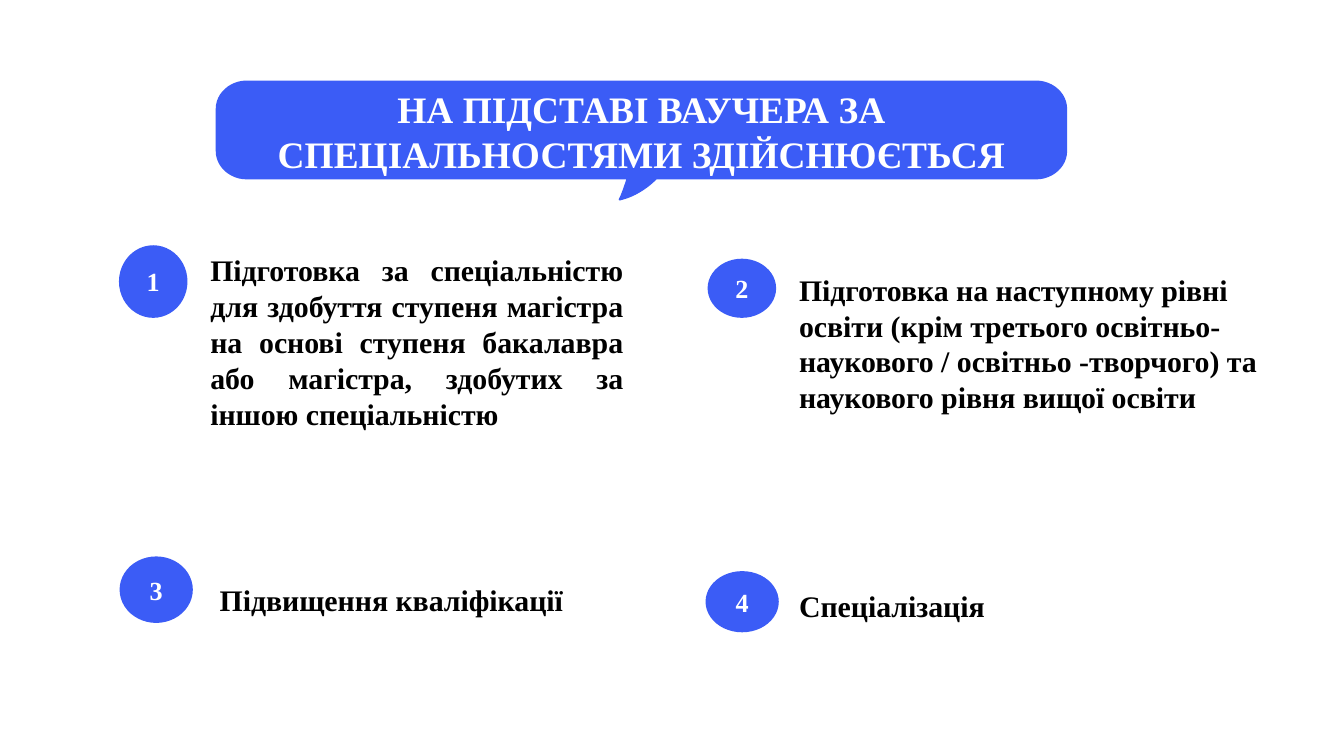
from pptx import Presentation
from pptx.dml.color import RGBColor
from pptx.enum.shapes import MSO_SHAPE as Shape
from pptx.enum.text import MSO_ANCHOR as Anchor, PP_ALIGN as Align
from pptx.util import Pt

PX = 4572  # EMU per px, 200 px to the inch
FONT = "Times New Roman"
COLORS = {"accent": "3B5CF6", "text": "000000", "light": "FFFFFF"}
CURVE_STEPS = 12

TITLE = "НА ПІДСТАВІ ВАУЧЕРА ЗА СПЕЦІАЛЬНОСТЯМИ ЗДІЙСНЮЄТЬСЯ"

# Speech bubble outline: a point is a line, three points are a Bézier curve
BUBBLE_START = (367, 120)
BUBBLE_SEGMENTS = [
    [(342, 120), (321, 139), (321, 162)],
    [(321, 225)],
    [(321, 248), (342, 267), (367, 267)],
    [(932, 267)],
    [(932, 267), (925, 289), (921, 296)],
    [(920, 298), (922, 299), (924, 298)],
    [(948, 292), (966, 278), (977, 267)],
    [(1542, 267)],
    [(1567, 267), (1588, 248), (1588, 225)],
    [(1588, 162)],
    [(1588, 139), (1567, 120), (1542, 120)],
    [BUBBLE_START],
]

# Text, text box, alignment, badge box (left, top, width, height)
ITEMS = [
    ("Підготовка за спеціальністю для здобуття ступеня магістра на основі "
     "ступеня бакалавра або магістра, здобутих за іншою спеціальністю",
     (299, 367, 643, 284), Align.JUSTIFY, (177, 365, 102, 108)),
    ("Підготовка на наступному рівні освіти (крім третього освітньо-наукового "
     "/ освітньо -творчого) та наукового рівня вищої освіти",
     (175 + 1000, 396, 718, 286), Align.LEFT, (1053, 385, 102, 88)),
    ("Підвищення кваліфікації",
     (313, 858, 606, 68), Align.LEFT, (178, 828, 109, 99)),
    ("Спеціалізація",
     (1175, 866, 644, 68), Align.LEFT, (1050, 850, 109, 91)),
]


def scale(values):
    return [round(value * PX) for value in values]


def color(name):
    return RGBColor.from_string(COLORS[name])


def write_text(shape, text, size, color_name, align, margins, anchor):
    frame = shape.text_frame
    frame.word_wrap = True
    frame.vertical_anchor = anchor
    (frame.margin_left, frame.margin_top,
     frame.margin_right, frame.margin_bottom) = scale(margins)
    frame.text = text
    paragraph = frame.paragraphs[0]
    paragraph.alignment = align
    font = paragraph.runs[0].font
    font.name, font.size, font.bold = FONT, Pt(size), True
    font.color.rgb = color(color_name)


def paint(shape):
    shape.shadow.inherit = False
    shape.fill.solid()
    shape.fill.fore_color.rgb = color("accent")
    shape.line.fill.background()


def curve_points(start, first, second, end):
    points = []
    for step in range(1, CURVE_STEPS + 1):
        t = step / CURVE_STEPS
        u = 1 - t
        points.append([
            u**3 * a + 3 * u * u * t * b + 3 * u * t * t * c + t**3 * d
            for a, b, c, d in zip(start, first, second, end)
        ])
    return points


def add_bubble(slide, text):
    outline = [BUBBLE_START]
    for segment in BUBBLE_SEGMENTS:
        is_curve = len(segment) == 3
        outline += curve_points(outline[-1], *segment) if is_curve else segment
    start, *points = [scale(point) for point in outline]
    builder = slide.shapes.build_freeform(*start)
    builder.add_line_segments(points, close=True)
    bubble = builder.convert_to_shape()
    paint(bubble)
    write_text(bubble, text, 20, "light", Align.CENTER, (42, 13, 42, 42), Anchor.MIDDLE)


def add_badge(slide, number, box):
    badge = slide.shapes.add_shape(Shape.OVAL, *scale(box))
    paint(badge)
    write_text(badge, str(number), 14, "light", Align.CENTER, (0, 0, 0, 0), Anchor.MIDDLE)


def add_label(slide, text, box, align):
    label = slide.shapes.add_textbox(*scale(box))
    write_text(label, text, 16, "text", align, (14, 8, 14, 8), Anchor.TOP)


def main():
    presentation = Presentation()
    presentation.slide_width, presentation.slide_height = scale((2000, 1125))
    slide = presentation.slides.add_slide(presentation.slide_layouts[6])

    # Heading
    add_bubble(slide, TITLE)

    # Numbered items
    for number, (text, text_box, align, badge_box) in enumerate(ITEMS, start=1):
        add_label(slide, text, text_box, align)
        add_badge(slide, number, badge_box)

    presentation.save("out.pptx")


if __name__ == "__main__":
    main()
